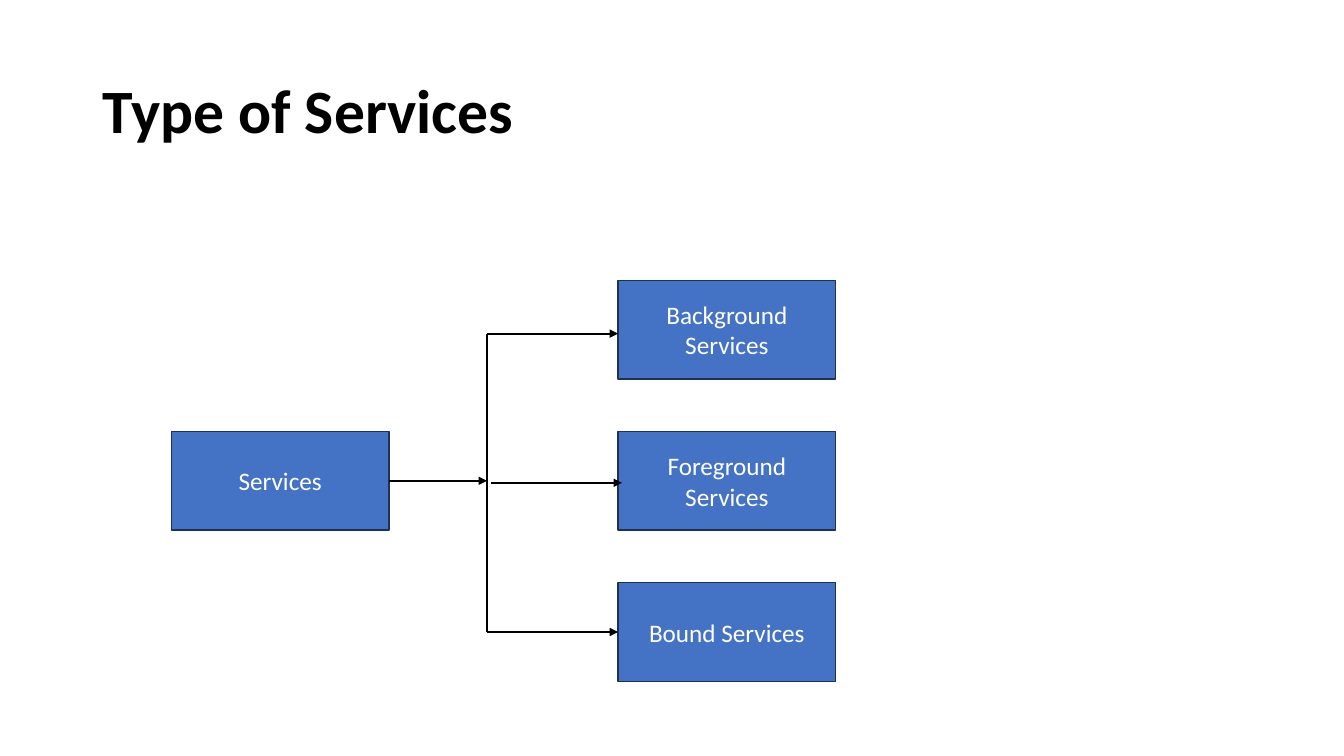
from pptx import Presentation
from pptx.dml.color import RGBColor
from pptx.enum.shapes import MSO_CONNECTOR as CONN, MSO_SHAPE as SHAPE
from pptx.enum.text import MSO_ANCHOR as ANCHOR, MSO_AUTO_SIZE as AUTO, PP_ALIGN as ALIGN
from pptx.oxml.ns import qn
from pptx.util import Pt
from lxml.etree import SubElement

PX = 9144
BOX_W, BOX_H = 216, 98
KINDS_X, KINDS_Y, KINDS_STEP = 613, 278, 150
SPINE_X, SPINE_TOP, SPINE_BOTTOM = 483, 331, 627


def px(*values):
    return [v * PX for v in values]


def rgb(hex_color):
    return RGBColor.from_string(hex_color)


def style_text(p, text, size, color, align, bold=False):
    p.text = text
    p.alignment = align
    p.font.name = "Calibri"
    p.font.size = Pt(size)
    p.font.bold = bold
    p.font.color.rgb = rgb(color)


def set_title(s, text):
    title = s.shapes.title
    title.left, title.top, title.width, title.height = px(92, 40, 1150, 145)
    tf = title.text_frame
    tf.word_wrap = True
    tf.auto_size = AUTO.NONE
    tf.vertical_anchor = ANCHOR.MIDDLE
    p = tf.paragraphs[0]
    style_text(p, text, 44, "000000", ALIGN.LEFT, True)
    p.line_spacing = 0.9


def add_box(s, text, x, y):
    sp = s.shapes.add_shape(SHAPE.RECTANGLE, *px(x, y, BOX_W, BOX_H))
    sp.shadow.inherit = False
    sp.fill.solid()
    sp.fill.fore_color.rgb = rgb("4472C4")
    sp.line.color.rgb = rgb("1E3256")
    sp.line.width = Pt(1)
    tf = sp.text_frame
    tf.word_wrap = True
    tf.vertical_anchor = ANCHOR.MIDDLE
    style_text(tf.paragraphs[0], text, 18, "FFFFFF", ALIGN.CENTER)
    return sp


def add_line(s, x1, y1, x2, y2, arrow=True):
    line = s.shapes.add_connector(CONN.STRAIGHT, *px(x1, y1, x2, y2))
    line.line.color.rgb = rgb("000000")
    line.line.width = Pt(1.5)
    if arrow:
        SubElement(line.line._get_or_add_ln(), qn("a:tailEnd"), type="triangle")
    SubElement(line._element.spPr, qn("a:effectLst"))
    return line


def main():
    prs = Presentation()
    prs.slide_width, prs.slide_height = px(1333, 750)
    s = prs.slides.add_slide(prs.slide_layouts[5])
    set_title(s, "Type of Services")

    services = add_box(s, "Services", 170, KINDS_Y + KINDS_STEP)
    kinds = ["Background Services", "Foreground Services", "Bound Services"]
    boxes = [add_box(s, kind, KINDS_X, KINDS_Y + i * KINDS_STEP)
             for i, kind in enumerate(kinds)]

    stem = add_line(s, 386, 477, SPINE_X, 477)
    stem.begin_connect(services, 3)
    add_line(s, SPINE_X, SPINE_TOP, SPINE_X, SPINE_BOTTOM, arrow=False)
    add_line(s, SPINE_X, SPINE_TOP, KINDS_X, SPINE_TOP)
    add_line(s, SPINE_X + 4, 479, KINDS_X + 4, 479)
    bound = add_line(s, SPINE_X, SPINE_BOTTOM, KINDS_X, SPINE_BOTTOM)
    bound.end_connect(boxes[-1], 1)

    prs.save("out.pptx")


if __name__ == "__main__":
    main()
